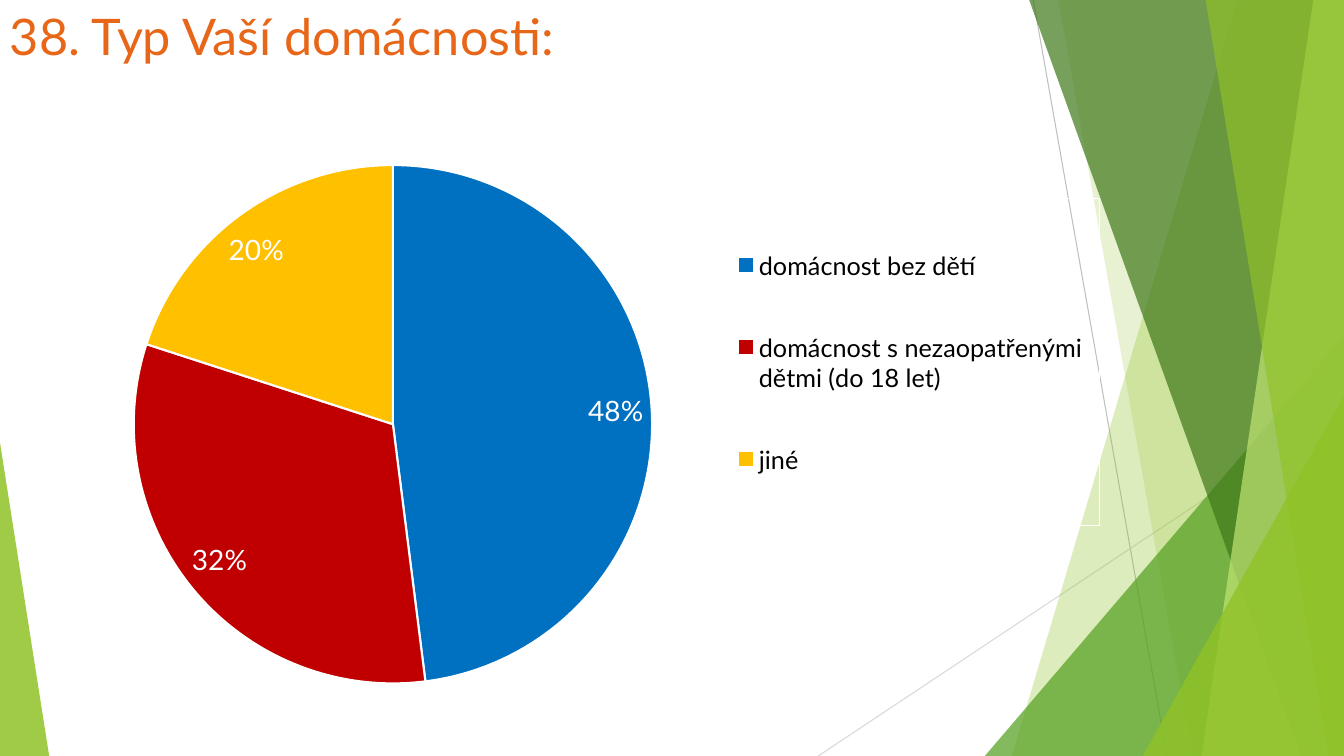
from lxml.etree import SubElement
from pptx import Presentation
from pptx.chart.data import CategoryChartData
from pptx.dml.color import RGBColor
from pptx.enum.chart import XL_CHART_TYPE, XL_LEGEND_POSITION
from pptx.enum.shapes import MSO_CONNECTOR, MSO_SHAPE
from pptx.oxml import parse_xml
from pptx.oxml.ns import nsdecls, qn
from pptx.util import Cm, Pt

FONT = "Lato"
WIDTH, HEIGHT = 33.87, 19.05

WHITE = RGBColor(0xFF, 0xFF, 0xFF)
BLACK = RGBColor(0x00, 0x00, 0x00)
ORANGE = RGBColor(0xE7, 0x66, 0x18)
LIME = RGBColor(0x90, 0xC2, 0x26)
GREEN = RGBColor(0x54, 0xA0, 0x21)
FOREST = RGBColor(0x3F, 0x78, 0x19)
PALE = RGBColor(0xC0, 0xE4, 0x74)
GREY = RGBColor(0xBF, 0xBF, 0xBF)
SILVER = RGBColor(0xD9, 0xD9, 0xD9)
BLUE = RGBColor(0x00, 0x70, 0xC0)
RED = RGBColor(0xC0, 0x00, 0x00)
GOLD = RGBColor(0xFF, 0xC0, 0x00)

HOMES = [
    ("domácnost bez dětí", 48, BLUE),
    ("domácnost s nezaopatřenými dětmi (do 18 let)", 32, RED),
    ("jiné", 20, GOLD),
]


def paint(shape, color, alpha):
    """Fill a shape with a see-through colour and no outline."""
    shape.shadow.inherit = False
    shape.fill.solid()
    shape.fill.fore_color.rgb = color
    shape.line.fill.background()
    tint = shape.fill._xPr.find(qn("a:solidFill"))[0]
    SubElement(tint, qn("a:alpha")).set("val", str(alpha * 1000))


def add_line(slide, start, end, color):
    ends = [Cm(value) for value in (*start, *end)]
    line = slide.shapes.add_connector(MSO_CONNECTOR.STRAIGHT, *ends)
    line.line.color.rgb = color
    line.line.width = Pt(0.75)
    SubElement(line._element.spPr, qn("a:effectLst"))


def add_band(slide, top, bottom, color, alpha):
    """Draw a band from a slanted left edge to the right slide edge."""
    corners = [(top, -0.02), (WIDTH, -0.02), (WIDTH, HEIGHT), (bottom, HEIGHT)]
    points = [(Cm(x), Cm(y)) for x, y in corners]
    pen = slide.shapes.build_freeform(*points[0], scale=1.0)
    pen.add_line_segments(points[1:], close=True)
    paint(pen.convert_to_shape(), color, alpha)


def add_peak(slide, left, width, height, apex, color, alpha):
    """Draw a triangle that stands on the bottom slide edge."""
    peak = slide.shapes.add_shape(
        MSO_SHAPE.ISOSCELES_TRIANGLE,
        Cm(left), Cm(HEIGHT - height), Cm(width), Cm(height))
    peak.adjustments[0] = apex
    paint(peak, color, alpha)


def add_title(slide, text):
    box = slide.shapes.add_textbox(Cm(0), Cm(0), Cm(23.88), Cm(3.66))
    box.text_frame.word_wrap = True
    box.text_frame.text = text
    font = box.text_frame.paragraphs[0].runs[0].font
    font.name, font.size, font.color.rgb = FONT, Pt(36), ORANGE


def set_font(font, size, color):
    font.name, font.size, font.color.rgb = FONT, Pt(size), color


def set_place(node, x, y, w, h, inner=False):
    """Place a chart part by fractions of the chart area."""
    target = '<c:layoutTarget val="inner"/>' if inner else ""
    sizes = "".join(f'<c:{key} val="{value}"/>' for key, value in
                    zip("xywh", (x, y, w, h)))
    layout = parse_xml(
        f'<c:layout {nsdecls("c")}><c:manualLayout>{target}'
        f'<c:xMode val="edge"/><c:yMode val="edge"/>{sizes}'
        '</c:manualLayout></c:layout>')
    old = node.find(qn("c:layout"))
    if old is not None:
        node.remove(old)
    # The layout opens the plot area and follows the legend position
    spot = node.find(qn("c:legendPos"))
    if spot is None:
        node.insert(0, layout)
    else:
        spot.addnext(layout)


def add_pie(slide, homes):
    data = CategoryChartData()
    data.categories = [name for name, _, _ in homes]
    data.add_series("Series 1", [share for _, share, _ in homes])
    frame = slide.shapes.add_chart(
        XL_CHART_TYPE.PIE, Cm(0.79), Cm(3.45), Cm(28.04), Cm(14.2), data)
    chart = frame.chart
    chart.has_title = False
    set_font(chart.font, 10, BLACK)

    # Slices
    plot = chart.plots[0]
    plot.vary_by_categories = True
    for index, (_, _, color) in enumerate(homes):
        look = plot.series[0].points[index].format
        look.fill.solid()
        look.fill.fore_color.rgb = color
        look.line.color.rgb = WHITE
        look.line.width = Pt(1.5)
    set_place(chart._chartSpace.chart.plotArea, 0.09, 0.05, 0.47, 0.92, True)

    # Percent labels
    plot.has_data_labels = True
    labels = plot.data_labels
    labels.show_value = False
    labels.show_percentage = True
    labels.number_format = "0%"
    labels.number_format_is_linked = False
    set_font(labels.font, 20, WHITE)

    # Legend
    chart.has_legend = True
    legend = chart.legend
    legend.position = XL_LEGEND_POSITION.RIGHT
    legend.include_in_layout = False
    set_font(legend.font, 18, BLACK)
    set_place(legend._element, 0.62, 0.11, 0.34, 0.58)
    border = parse_xml(
        f'<c:spPr {nsdecls("c", "a")}><a:ln w="9525"><a:solidFill>'
        f'<a:srgbClr val="{WHITE}"/></a:solidFill></a:ln></c:spPr>')
    legend._element.find(qn("c:txPr")).addprevious(border)


def main():
    deck = Presentation()
    deck.slide_width, deck.slide_height = Cm(WIDTH), Cm(HEIGHT)
    slide = deck.slides.add_slide(deck.slide_layouts[6])

    # Green backdrop, from back to front
    add_line(slide, (26.04, 0), (29.41, HEIGHT), GREY)
    add_line(slide, (WIDTH, 10.24), (20.62, HEIGHT), SILVER)
    add_band(slide, 31.19, 25.5, LIME, 30)
    add_band(slide, 26.67, 30.05, LIME, 20)
    add_peak(slide, 24.82, 9.05, 10.59, 1, GREEN, 72)
    add_band(slide, 25.93, 32.79, FOREST, 70)
    add_band(slide, 33.1, 30.28, PALE, 70)
    add_band(slide, 30.38, 33.48, LIME, 65)
    add_peak(slide, 28.8, 5.07, 9.07, 1, LIME, 80)
    add_peak(slide, 0, 1.24, 7.9, 0, LIME, 85)

    # Content
    add_title(slide, "38. Typ Vaší domácnosti:")
    add_pie(slide, HOMES)

    deck.save("out.pptx")


if __name__ == "__main__":
    main()
